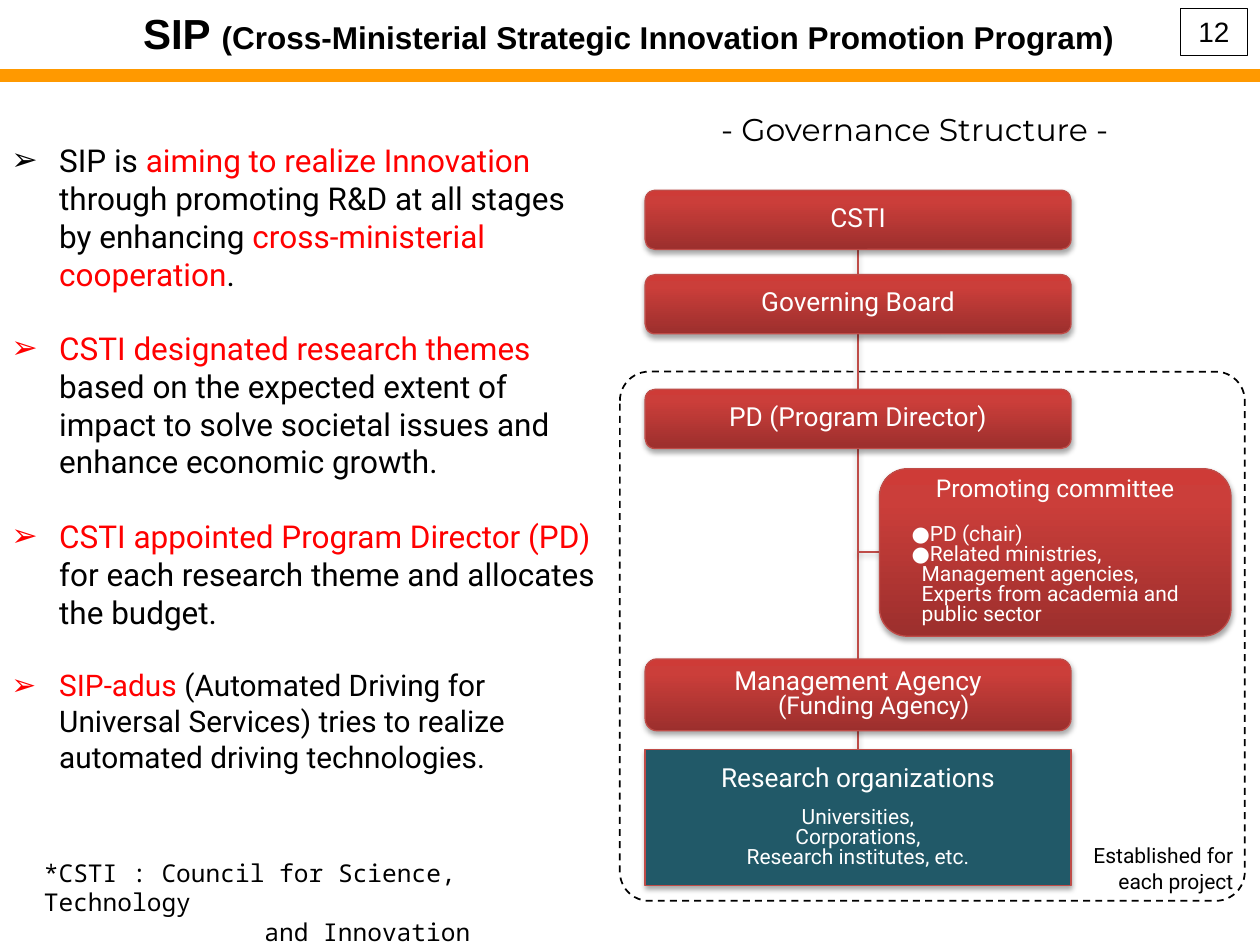
"""Build a slide on the SIP programme and its governance structure."""
from copy import deepcopy

from lxml.etree import SubElement
from pptx import Presentation
from pptx.dml.color import RGBColor
from pptx.enum.dml import MSO_LINE
from pptx.enum.shapes import MSO_CONNECTOR, MSO_SHAPE
from pptx.enum.text import MSO_ANCHOR, MSO_AUTO_SIZE, PP_ALIGN
from pptx.oxml.ns import qn
from pptx.util import Inches, Pt

BLACK = RGBColor(0x00, 0x00, 0x00)
WHITE = RGBColor(0xFF, 0xFF, 0xFF)
RED = RGBColor(0xFF, 0x00, 0x00)
ORANGE = RGBColor(0xFF, 0x99, 0x00)
TEAL = RGBColor(0x21, 0x59, 0x68)
BORDER_RED = RGBColor(0xBF, 0x4C, 0x48)
GRADIENT = (
    (0, RGBColor(0x9C, 0x2F, 0x2D)),
    (0.8, RGBColor(0xCB, 0x3E, 0x3A)),
    (1, RGBColor(0xCE, 0x3B, 0x37)),
)
BREAK = "\v"
BOX_LEFT, BOX_WIDTH = 5.12, 3.38
TRUNK = BOX_LEFT + BOX_WIDTH / 2

BULLETS = (
    (18, (("SIP is ", BLACK), ("aiming to realize Innovation ", RED),
          ("through promoting R&D at all stages by enhancing ", BLACK),
          ("cross-ministerial cooperation", RED), (".", BLACK))),
    (18, (("CSTI designated research themes", RED),
          (" based on the expected extent of impact to solve societal issues "
           "and enhance economic growth.", BLACK))),
    (18, (("CSTI appointed Program Director (PD) ", RED),
          ("for each research theme and allocates the budget.", BLACK))),
    (17, (("SIP-adus", RED),
          (" (Automated Driving for Universal Services) tries to realize "
           "automated driving technologies.", BLACK))),
)


def add_text(paragraph, text, size=12, color=BLACK, font="Roboto", bold=False):
    """Add text to a paragraph, turning each BREAK into a line break."""
    for index, line in enumerate(text.split(BREAK)):
        if index:
            paragraph.add_line_break()
        run = paragraph.add_run()
        run.text = line
        run.font.size = Pt(size)
        run.font.name = font
        run.font.bold = bold
        run.font.color.rgb = color


class SlideBuilder:
    """Hold the current slide and the style of its elements."""

    def __init__(self, presentation):
        """Add a title and content slide."""
        self.slide = presentation.slides.add_slide(presentation.slide_layouts[1])

    def frame(self, shape, insets=(0.09, 0.04), anchor=MSO_ANCHOR.TOP):
        """Set wrapping, insets and anchor of a shape's text."""
        frame = shape.text_frame
        frame.word_wrap = True
        frame.auto_size = MSO_AUTO_SIZE.NONE
        frame.vertical_anchor = anchor
        frame.margin_left = frame.margin_right = Inches(insets[0])
        frame.margin_top = frame.margin_bottom = Inches(insets[1])
        return frame

    def paragraph(self, frame, align=PP_ALIGN.LEFT, spacing=1.0, before=0,
                  margin=0, indent=0):
        """Return the next paragraph of a frame, formatted."""
        paragraph = frame.paragraphs[-1]
        if paragraph.runs:
            paragraph = frame.add_paragraph()
        paragraph.alignment = align
        paragraph.line_spacing = spacing
        paragraph.space_before = Pt(before)
        properties = paragraph._p.get_or_add_pPr()
        properties.set("marL", str(Inches(margin)))
        properties.set("indent", str(Inches(indent)))
        return paragraph

    def place(self, shape, left, top, width, height):
        """Move and size a placeholder."""
        shape.left, shape.top = Inches(left), Inches(top)
        shape.width, shape.height = Inches(width), Inches(height)

    def title(self, parts):
        """Fill the title placeholder."""
        shape = self.slide.shapes.title
        self.place(shape, 0.49, 0.02, 9, 0.48)
        frame = self.frame(shape, (0.1, 0.05), MSO_ANCHOR.MIDDLE)
        paragraph = self.paragraph(frame, PP_ALIGN.CENTER)
        for text, size in parts:
            add_text(paragraph, text, size, font="Arial", bold=True)

    def bullets(self, items):
        """Fill the body placeholder with arrow bullets."""
        shape = self.slide.placeholders[1]
        self.place(shape, 0, 1.08, 4.84, 5.54)
        frame = self.frame(shape)
        for index, (size, parts) in enumerate(items):
            paragraph = self.paragraph(frame, before=21 if index else 0,
                                       margin=0.38, indent=-0.38)
            SubElement(paragraph._p.pPr, qn("a:buChar"), char="➢")
            for text, color in parts:
                add_text(paragraph, text, size, color)

    def text_box(self, left, top, width, height, insets=(0.09, 0.04),
                 anchor=MSO_ANCHOR.TOP):
        """Add a text box and return its text frame."""
        shape = self.slide.shapes.add_textbox(
            Inches(left), Inches(top), Inches(width), Inches(height))
        return self.frame(shape, insets, anchor)

    def outline(self, kind, left, top, width, height, color=BLACK, line=0.75):
        """Add a white preset shape with an outline and no shadow."""
        shape = self.slide.shapes.add_shape(
            kind, Inches(left), Inches(top), Inches(width), Inches(height))
        shape.shadow.inherit = False
        shape.fill.solid()
        shape.fill.fore_color.rgb = WHITE
        shape.line.color.rgb = color
        shape.line.width = Pt(line)
        return shape

    def box(self, top, height, left=BOX_LEFT, width=BOX_WIDTH,
            kind=MSO_SHAPE.ROUNDED_RECTANGLE, fill=None):
        """Add a shadowed governance box and return its text frame."""
        shape = self.outline(kind, left, top, width, height, BORDER_RED)
        if fill is None:
            self.gradient(shape)
        else:
            shape.fill.fore_color.rgb = fill
        self.shadow(shape._element.spPr.find(qn("a:effectLst")))
        return self.frame(shape, (0, 0.01), MSO_ANCHOR.MIDDLE)

    def gradient(self, shape):
        """Fill a shape with the three-stop red gradient."""
        shape.fill.gradient()
        shape.fill.gradient_angle = 90
        stops = shape._element.spPr.find(qn("a:gradFill")).find(qn("a:gsLst"))
        stops.append(deepcopy(stops[-1]))
        for stop, (position, color) in zip(shape.fill.gradient_stops, GRADIENT):
            stop.position = position
            stop.color.rgb = color

    def shadow(self, effects):
        """Add the soft downward shadow to an effect list."""
        outer = SubElement(effects, qn("a:outerShdw"), blurRad=str(Pt(3.1)),
                           dist=str(Pt(1.8)), dir="5400000", rotWithShape="0")
        color = SubElement(outer, qn("a:srgbClr"), val=str(BLACK))
        SubElement(color, qn("a:alpha"), val="35000")

    def line(self, start, end, color=BORDER_RED, width=0.75, shadow=True):
        """Add a straight line between two points."""
        connector = self.slide.shapes.add_connector(
            MSO_CONNECTOR.STRAIGHT, *(Inches(value) for value in start + end))
        connector.line.color.rgb = color
        connector.line.width = Pt(width)
        effects = SubElement(connector._element.spPr, qn("a:effectLst"))
        if shadow:
            self.shadow(effects)

    def governance(self):
        """Draw the governance structure."""
        center = {"align": PP_ALIGN.CENTER, "spacing": 0.8}
        project = self.outline(MSO_SHAPE.ROUNDED_RECTANGLE, 4.92, 2.95, 4.96, 4.2, line=1)
        project.adjustments[0] = 0.055
        project.line.dash_style = MSO_LINE.DASH
        for top, bottom in ((1.98, 2.18), (2.65, 3.09), (3.56, 5.95)):
            self.line((TRUNK, top), (TRUNK, bottom))
        self.line((6.98, 4.38), (TRUNK, 4.38))

        for top, name in ((1.51, "CSTI"), (2.18, "Governing Board"),
                          (3.09, "PD (Program Director)")):
            add_text(self.paragraph(self.box(top, 0.47), **center), name, 15, WHITE)

        committee = self.box(3.72, 1.33, 6.98, 2.79)
        add_text(self.paragraph(committee, **center), "Promoting committee", 14, WHITE)
        members = ("●PD (chair)", BREAK.join((
            "●Related ministries,", "Management agencies,",
            "Experts from academia and", "public sector")))
        for before, text in zip((13, 0), members):
            paragraph = self.paragraph(committee, spacing=0.8, before=before,
                                       margin=0.27, indent=-0.08)
            add_text(paragraph, text, 12, WHITE)

        agency = self.paragraph(self.box(5.23, 0.57), margin=0.25, indent=-0.25, **center)
        add_text(agency, "Management Agency", 15, WHITE)
        agency.add_line_break()
        add_text(agency, "(Funding Agency)", 14, WHITE)

        research = self.box(5.95, 1.08, kind=MSO_SHAPE.RECTANGLE, fill=TEAL)
        add_text(self.paragraph(research, **center), "Research organizations", 15, WHITE)
        for before, text in ((9, "Universities,"), (0, "Corporations,"),
                             (0, "Research institutes, etc.")):
            add_text(self.paragraph(research, before=before, **center), text, 12, WHITE)

        scope = self.text_box(8.57, 6.65, 1.31, 0.49)
        for text in ("Established for", "each project"):
            add_text(self.paragraph(scope, PP_ALIGN.RIGHT), text)
        heading = self.text_box(4.84, 0.85, 4.84, 0.34, anchor=MSO_ANCHOR.MIDDLE)
        add_text(self.paragraph(heading, PP_ALIGN.CENTER),
                 "- Governance Structure -", 18, font="Montserrat")


def main():
    """Build and save the presentation."""
    presentation = Presentation()
    presentation.slide_width, presentation.slide_height = Inches(10), Inches(7.5)
    builder = SlideBuilder(presentation)
    builder.title((("SIP ", 24), (
        "(Cross-Ministerial Strategic Innovation Promotion Program)", 18)))
    builder.line((0, 0.6), (10, 0.6), ORANGE, 7, shadow=False)
    builder.bullets(BULLETS)
    builder.governance()
    number = builder.frame(builder.outline(MSO_SHAPE.RECTANGLE, 9.37, 0.07, 0.53, 0.37),
                           (0.1, 0.05))
    add_text(builder.paragraph(number, PP_ALIGN.CENTER), "12", 16, font="Arial")
    footnote = builder.text_box(0.25, 6.76, 4.67, 0.57, (0.1, 0.05))
    for margin, text in ((0, "*CSTI : Council for Science, Technology"),
                         (1.75, "and Innovation")):
        add_text(builder.paragraph(footnote, margin=margin), text, 14,
                 font="Noto Sans Mono")
    presentation.save("out.pptx")


if __name__ == "__main__":
    main()
